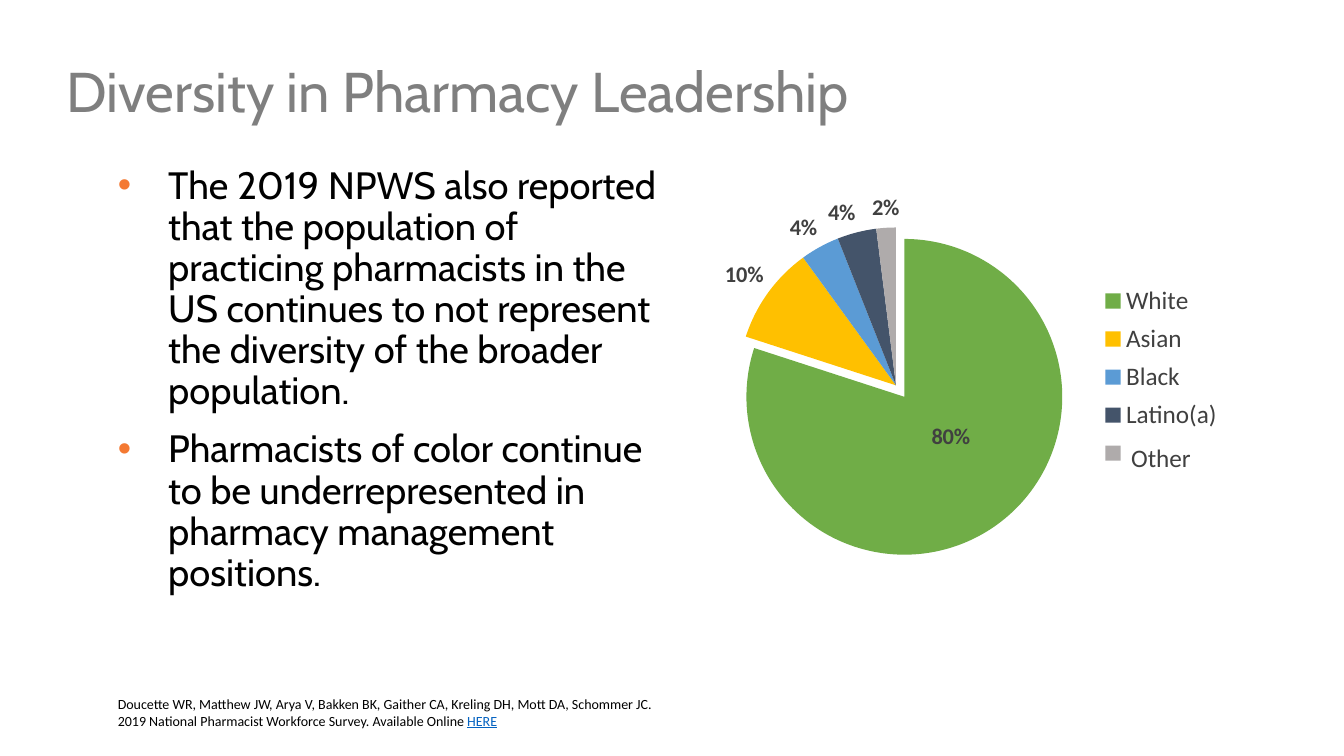
from lxml.etree import SubElement
from pptx import Presentation
from pptx.chart.data import CategoryChartData
from pptx.dml.color import RGBColor
from pptx.enum.chart import XL_CHART_TYPE, XL_LABEL_POSITION, XL_LEGEND_POSITION
from pptx.enum.shapes import MSO_SHAPE
from pptx.enum.text import MSO_ANCHOR, PP_ALIGN
from pptx.oxml import parse_xml
from pptx.oxml.ns import nsdecls, qn
from pptx.util import Inches, Pt

TITLE = {"name": "Cabin", "size": Pt(40), "color": "7F7F7F"}
BODY = {"name": "Cabin", "size": Pt(27.2), "color": "000000"}
SOURCE = {"name": "Calibri", "size": Pt(10), "color": "000000"}
LINK = {**SOURCE, "color": "0563C1", "underline": True}
LEGEND = {"name": "Calibri", "size": Pt(18), "color": "404040"}
PERCENT = {**LEGEND, "size": Pt(16), "bold": True}

POINTS = [
    "The 2019 NPWS also reported that the population of practicing pharmacists "
    "in the US continues to not represent the diversity of the broader population.",
    "Pharmacists of color continue to be underrepresented in pharmacy management positions.",
]
CITATION = (
    "Doucette WR, Matthew JW, Arya V, Bakken BK, Gaither CA, Kreling DH, Mott DA, "
    "Schommer JC. 2019 National Pharmacist Workforce Survey. Available Online "
)
SHARES = {  # group: (percent, slice colour)
    "White ": (80, "70AD47"),
    "Asian ": (10, "FFC000"),
    "Black ": (4, "5B9BD5"),
    "Latino(a)": (4, "44546A"),
    "other ": (2, "AFABAB"),
}


def rgb(value):
    return RGBColor.from_string(value)


def style(font, look):
    for key, value in look.items():
        if key == "color":
            font.color.rgb = rgb(value)
        else:
            setattr(font, key, value)


def add_run(paragraph, text, look):
    run = paragraph.add_run()
    run.text = text
    style(run.font, look)


def add_frame(slide, box):
    frame = slide.shapes.add_textbox(*map(Inches, box)).text_frame
    frame.word_wrap = True
    return frame


def add_bullet(paragraph, color, indent):
    props = paragraph._p.get_or_add_pPr()
    props.set("marL", str(Inches(indent)))
    props.set("indent", str(-Inches(indent)))
    bullet_color = SubElement(props, qn("a:buClr"))
    SubElement(bullet_color, qn("a:srgbClr")).set("val", color)
    SubElement(props, qn("a:buFont")).set("typeface", "Arial")
    SubElement(props, qn("a:buChar")).set("char", "•")


def manual_layout(**settings):
    parts = "".join(f'<c:{key} val="{value}"/>' for key, value in settings.items())
    return parse_xml(
        f'<c:layout {nsdecls("c")}><c:manualLayout>{parts}</c:manualLayout></c:layout>'
    )


def add_title(slide, box):
    heading = add_frame(slide, box).paragraphs[0]
    heading.line_spacing = 0.9
    add_run(heading, "Diversity in Pharmacy Leadership", TITLE)


def add_findings(slide, box):
    frame = add_frame(slide, box)
    for i, point in enumerate(POINTS):
        finding = frame.add_paragraph() if i else frame.paragraphs[0]
        finding.line_spacing = 0.9
        finding.space_after = Pt(12)
        add_bullet(finding, "F47932", 0.5)
        add_run(finding, point, BODY)


def add_citation(slide, box):
    citation = add_frame(slide, box).paragraphs[0]
    add_run(citation, CITATION, SOURCE)
    add_run(citation, "HERE", LINK)


def add_shares(slide, box):
    left, top, _, _ = box
    data = CategoryChartData()
    data.categories = list(SHARES)
    data.add_series("Series 1", [share for share, _ in SHARES.values()])
    chart = slide.shapes.add_chart(XL_CHART_TYPE.PIE, *map(Inches, box), data).chart
    chart.has_title = False
    style(chart.font, SOURCE)

    # Legend and plot placement
    chart.has_legend = True
    legend = chart.legend
    legend.position = XL_LEGEND_POSITION.RIGHT
    legend.include_in_layout = False
    style(legend.font, LEGEND)
    for old in legend._element.findall(qn("c:layout")):
        legend._element.remove(old)
    legend._element.find(qn("c:legendPos")).addnext(
        manual_layout(xMode="edge", yMode="edge", x=0.57, y=0.22, w=0.18, h=0.47))
    plot_area = chart._chartSpace.chart.plotArea
    for old in plot_area.findall(qn("c:layout")):
        plot_area.remove(old)
    plot_area.insert(0, manual_layout(
        layoutTarget="inner", xMode="edge", yMode="edge", x=0.064, y=0.081, w=0.445, h=0.787))

    # Slices and percentages
    pie = chart.plots[0]
    pie.vary_by_categories = True
    series = pie.series[0]
    for i, (_, color) in enumerate(SHARES.values()):
        fill = series.points[i].format.fill
        fill.solid()
        fill.fore_color.rgb = rgb(color)
    labels = series.data_labels
    labels.show_percentage = True
    labels.show_value = False
    labels.number_format = "0%"
    labels.number_format_is_linked = False
    labels.position = XL_LABEL_POSITION.OUTSIDE_END
    style(labels.font, PERCENT)

    # White slice: pulled out, with its percentage inside
    white = series.points[0]
    white_slice = series._element.find(qn("c:dPt"))
    white_slice.find(qn("c:spPr")).addprevious(
        parse_xml(f'<c:explosion {nsdecls("c")} val="9"/>'))
    style(white.data_label.font, PERCENT)
    white.data_label.position = XL_LABEL_POSITION.CENTER
    white_label = labels._element.find(qn("c:dLbl"))
    white_label.find(qn("c:showVal")).set("val", "0")
    white_label.find(qn("c:showPercent")).set("val", "1")
    white_label.find(qn("c:idx")).addnext(manual_layout(x=0, y=-0.055))

    # Legend entry for the last group
    other = slide.shapes.add_shape(
        MSO_SHAPE.RECTANGLE, *map(Inches, (left + 4.25, top + 2.5, 0.89, 0.4)))
    other.shadow.inherit = False
    other.fill.solid()
    other.fill.fore_color.rgb = rgb("FFFFFF")
    other.line.fill.background()
    other.text_frame.vertical_anchor = MSO_ANCHOR.TOP
    entry = other.text_frame.paragraphs[0]
    entry.alignment = PP_ALIGN.LEFT
    add_run(entry, "Other", LEGEND)


def main():
    deck = Presentation()
    deck.slide_width, deck.slide_height = Inches(13.33), Inches(7.5)
    slide = deck.slides.add_slide(deck.slide_layouts[6])
    add_title(slide, (0.56, 0.59, 12.15, 1.01))
    add_findings(slide, (1.07, 1.6, 5.56, 4.65))
    add_citation(slide, (1.07, 6.85, 5.8, 0.44))
    add_shares(slide, (6.87, 1.84, 7.04, 4.18))
    deck.save("out.pptx")


if __name__ == "__main__":
    main()
